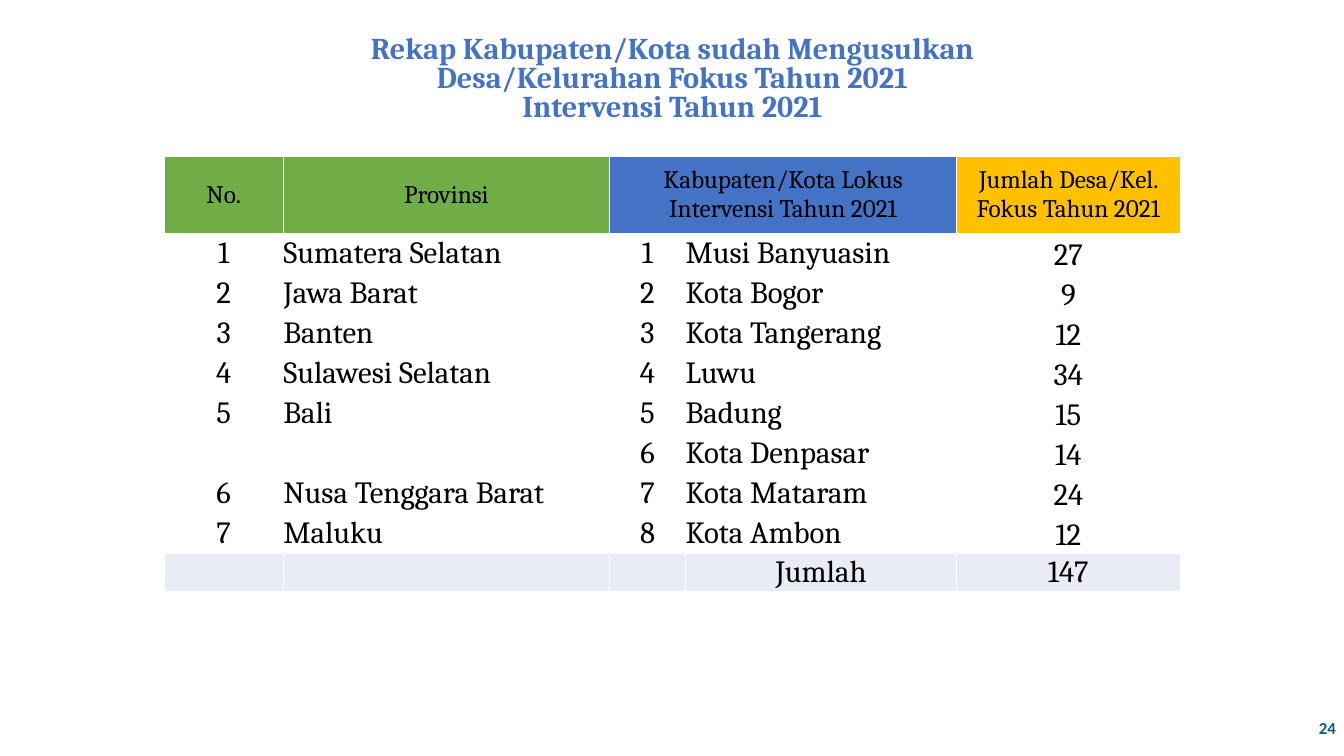
from dataclasses import dataclass
from typing import Optional

from pptx import Presentation
from pptx.dml.color import RGBColor
from pptx.enum.text import MSO_ANCHOR, MSO_AUTO_SIZE, PP_ALIGN
from pptx.util import Emu, Inches, Pt

LEFT, CENTER, RIGHT = PP_ALIGN.LEFT, PP_ALIGN.CENTER, PP_ALIGN.RIGHT
TOP, MIDDLE, BOTTOM = MSO_ANCHOR.TOP, MSO_ANCHOR.MIDDLE, MSO_ANCHOR.BOTTOM
SLIDE_WIDTH, SLIDE_HEIGHT = Inches(13.33), Inches(7.5)
TITLE_ONLY_LAYOUT = 5


@dataclass(frozen=True)
class Theme:
    serif: str = "Cambria"
    sans: str = "Calibri"
    black: str = "000000"
    blue: str = "4472C4"
    green: str = "70AD47"
    gold: str = "FFC000"
    pale: str = "E9EBF5"
    navy: str = "095693"
    title_size: float = 21.6
    header_size: float = 18
    body_size: float = 22
    number_size: float = 12


@dataclass(frozen=True)
class TextStyle:
    name: str
    size: float
    color: str
    bold: bool = False


@dataclass(frozen=True)
class Area:
    """A box in percent of the slide's width and height."""
    left: float
    top: float
    width: float
    height: float


@dataclass(frozen=True)
class Column:
    header: str
    fill: str
    width: float
    align: PP_ALIGN = CENTER
    anchor: MSO_ANCHOR = MIDDLE


THEME = Theme()
TITLE_STYLE = TextStyle(THEME.serif, THEME.title_size, THEME.blue, True)
HEADER_STYLE = TextStyle(THEME.serif, THEME.header_size, THEME.black)
BODY_STYLE = TextStyle(THEME.serif, THEME.body_size, THEME.black)
NUMBER_STYLE = TextStyle(THEME.sans, THEME.number_size, THEME.navy, True)

TITLE_LINES = [
    "Rekap Kabupaten/Kota sudah Mengusulkan",
    "Desa/Kelurahan Fokus Tahun 2021",
    "Intervensi Tahun 2021",
]
TITLE_AREA = Area(6.75, 4.13, 86.57, 13.87)
NUMBER_AREA = Area(96.6, 93.6, 3.4, 5.33)
TABLE_LEFT, TABLE_TOP = 12.2, 20.7
HEADER_HEIGHT, ROW_HEIGHT, TOTAL_HEIGHT = 10.2, 5.29, 5.07

COLUMNS = [
    Column("No.", THEME.green, 8.89),
    Column("Provinsi", THEME.green, 24.26, LEFT),
    Column("Kabupaten/Kota Lokus Intervensi Tahun 2021", THEME.blue, 5.66),
    Column("", THEME.blue, 20.17, LEFT),
    Column("Jumlah Desa/Kel. Fokus Tahun 2021", THEME.gold, 16.63, CENTER, BOTTOM),
]
ROWS = [
    ("1", "Sumatera Selatan", "1", "Musi Banyuasin", "27"),
    ("2", "Jawa Barat", "2", "Kota Bogor", "9"),
    ("3", "Banten", "3", "Kota Tangerang", "12"),
    ("4", "Sulawesi Selatan", "4", "Luwu", "34"),
    ("5", "Bali", "5", "Badung", "15"),
    ("", "", "6", "Kota Denpasar", "14"),
    ("6", "Nusa Tenggara Barat", "7", "Kota Mataram", "24"),
    ("7", "Maluku", "8", "Kota Ambon", "12"),
]
TOTAL_ROW = ("", "", "", "Jumlah", "147")


def across(percent: float) -> Emu:
    return Emu(round(SLIDE_WIDTH * percent / 100))


def down(percent: float) -> Emu:
    return Emu(round(SLIDE_HEIGHT * percent / 100))


def box(area: Area) -> tuple[Emu, Emu, Emu, Emu]:
    return across(area.left), down(area.top), across(area.width), down(area.height)


def apply(target, **values) -> None:
    for name, value in values.items():
        setattr(target, name, value)


def write(paragraph, text: str, style: TextStyle, align: PP_ALIGN) -> None:
    paragraph.alignment = align
    if text:
        run = paragraph.add_run()
        run.text = text
        apply(run.font, name=style.name, size=Pt(style.size), bold=style.bold)
        run.font.color.rgb = RGBColor.from_string(style.color)


def fill_cell(cell, text: str, style: TextStyle, align: PP_ALIGN,
              anchor: MSO_ANCHOR, fill: Optional[str]) -> None:
    apply(cell, margin_left=0, margin_right=0, margin_top=0, margin_bottom=0,
          vertical_anchor=anchor)
    if fill:
        cell.fill.solid()
        cell.fill.fore_color.rgb = RGBColor.from_string(fill)
    else:
        cell.fill.background()
    write(cell.text_frame.paragraphs[0], text, style, align)


def add_title(slide) -> None:
    title = slide.shapes.title
    left, top, width, height = box(TITLE_AREA)
    apply(title, left=left, top=top, width=width, height=height)
    frame = title.text_frame
    apply(frame, word_wrap=True, auto_size=MSO_AUTO_SIZE.NONE, vertical_anchor=TOP)
    for index, line in enumerate(TITLE_LINES):
        paragraph = frame.add_paragraph() if index else frame.paragraphs[0]
        apply(paragraph, line_spacing=0.8, space_before=Pt(0))
        write(paragraph, line, TITLE_STYLE, CENTER)


def add_recap_table(slide) -> None:
    heights = [HEADER_HEIGHT, *[ROW_HEIGHT] * len(ROWS), TOTAL_HEIGHT]
    area = Area(TABLE_LEFT, TABLE_TOP, sum(column.width for column in COLUMNS), sum(heights))
    table = slide.shapes.add_table(len(heights), len(COLUMNS), *box(area)).table
    apply(table, first_row=False, horz_banding=False)
    for row, height in zip(table.rows, heights):
        row.height = down(height)

    last = len(heights) - 1
    for index, column in enumerate(COLUMNS):
        table.columns[index].width = across(column.width)
        fill_cell(table.cell(0, index), column.header, HEADER_STYLE, CENTER, MIDDLE, column.fill)
        for number, values in enumerate(ROWS, start=1):
            fill_cell(table.cell(number, index), values[index], BODY_STYLE,
                      column.align, column.anchor, None)
        fill_cell(table.cell(last, index), TOTAL_ROW[index], BODY_STYLE, CENTER, MIDDLE, THEME.pale)
    table.cell(0, 2).merge(table.cell(0, 3))


def add_page_number(slide) -> None:
    frame = slide.shapes.add_textbox(*box(NUMBER_AREA)).text_frame
    apply(frame, word_wrap=True, vertical_anchor=MIDDLE, margin_right=Inches(0.08))
    write(frame.paragraphs[0], "24", NUMBER_STYLE, RIGHT)


def main() -> None:
    presentation = Presentation()
    apply(presentation, slide_width=SLIDE_WIDTH, slide_height=SLIDE_HEIGHT)
    slide = presentation.slides.add_slide(presentation.slide_layouts[TITLE_ONLY_LAYOUT])
    add_title(slide)
    add_recap_table(slide)
    add_page_number(slide)
    presentation.save("out.pptx")


if __name__ == "__main__":
    main()
